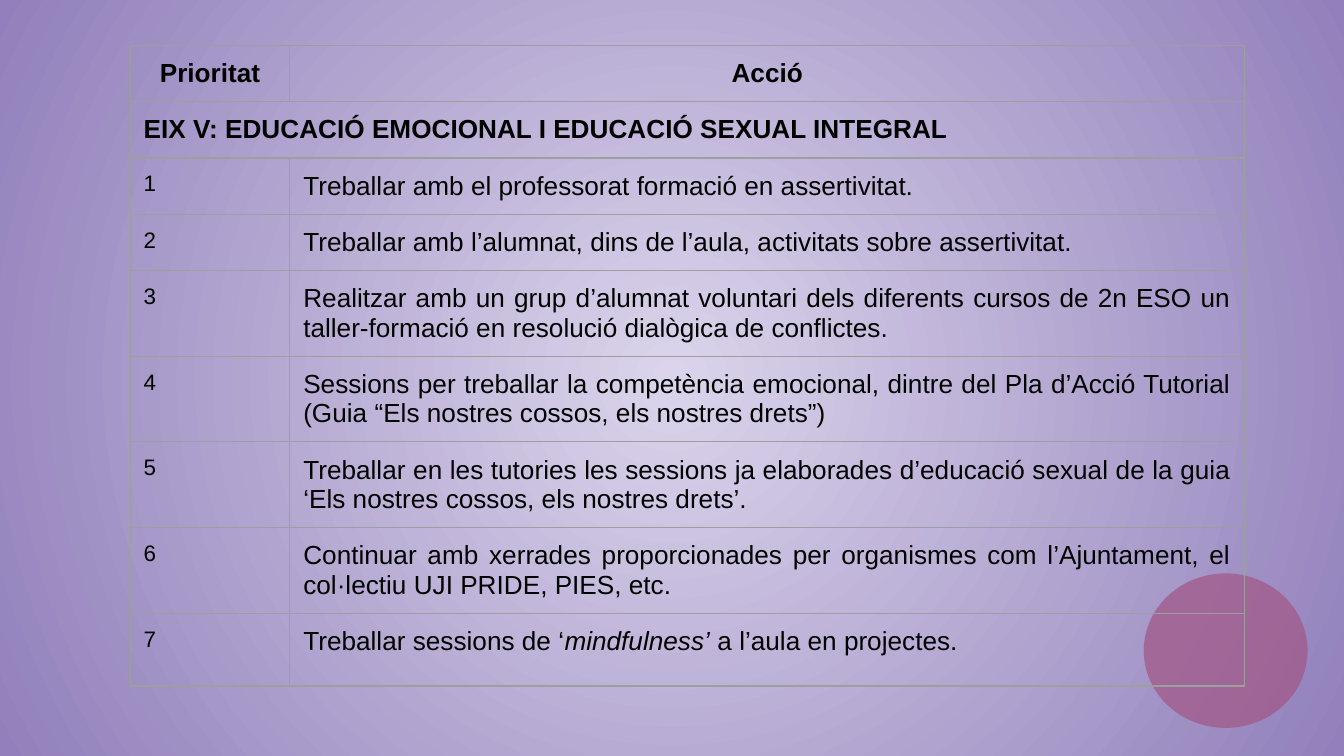
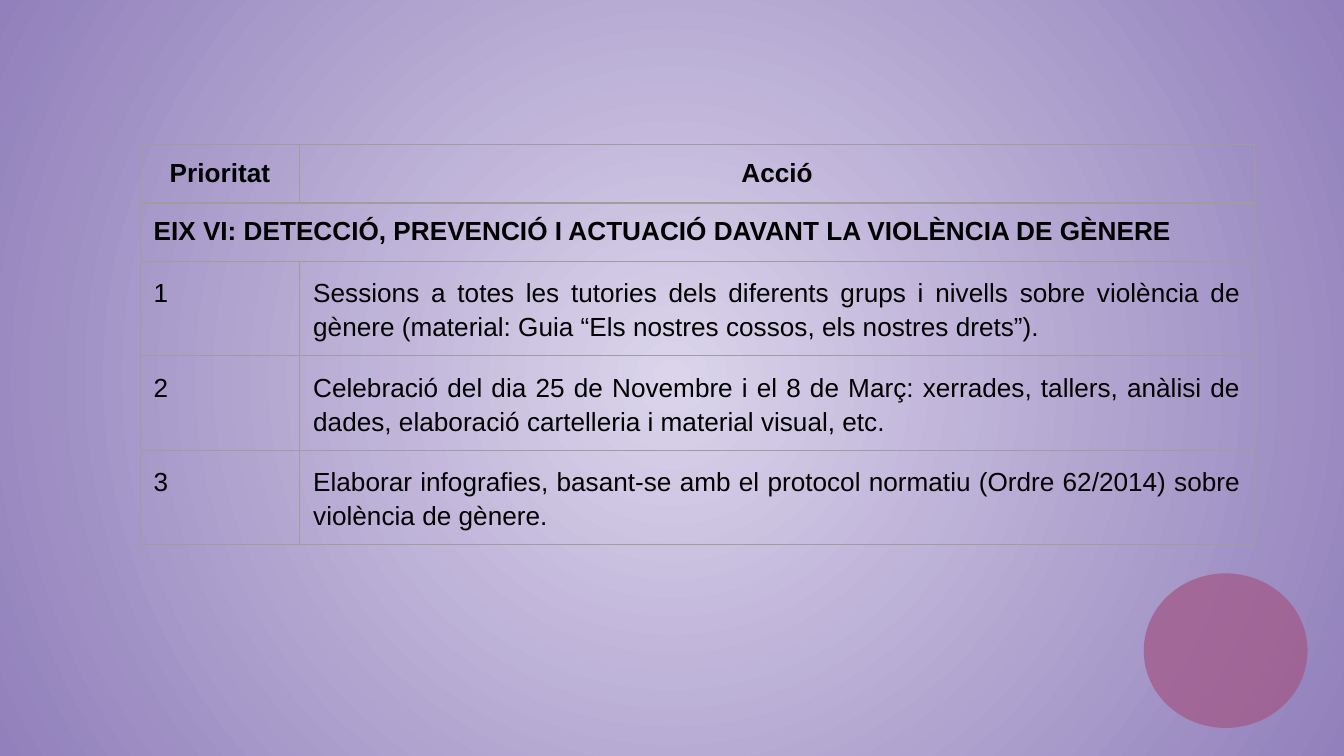
"""Two slides of school action tables, one per axis of the plan."""
import pptx
import pptx.dml.color
import pptx.enum.shapes
import pptx.enum.text
import pptx.oxml
import pptx.oxml.ns
import pptx.util
from lxml import etree

Pt = pptx.util.Pt
RGB = pptx.dml.color.RGBColor
ALIGN = pptx.enum.text.PP_ALIGN
qn = pptx.oxml.ns.qn

LILAC = RGB(0xDB, 0xD4, 0xEB)
VIOLET = RGB(0x91, 0x80, 0xBB)
PLUM = RGB(0xA1, 0x58, 0x87)
GREY = RGB(0x9E, 0x9E, 0x9E)
BLACK = RGB(0, 0, 0)
FONT = "Arial"
SIZE = 14
COLUMNS = (85.5, 511.5)
INSET = 7.2

EMOTIONAL = [
    "Treballar amb el professorat formació en assertivitat.",
    "Treballar amb l’alumnat, dins de l’aula, activitats sobre assertivitat.",
    "Realitzar amb un grup d’alumnat voluntari dels diferents cursos de 2n ESO un "
    "taller-formació en resolució dialògica de conflictes.",
    "Sessions per treballar la competència emocional, dintre del Pla d’Acció Tutorial "
    "(Guia “Els nostres cossos, els nostres drets”)",
    "Treballar en les tutories les sessions ja elaborades d’educació sexual de la guia "
    "‘Els nostres cossos, els nostres drets’.",
    "Continuar amb xerrades proporcionades per organismes com l’Ajuntament, el "
    "col·lectiu UJI PRIDE, PIES, etc.",
    ("Treballar sessions de ‘", "mindfulness’", " a l’aula en projectes."),
]
VIOLENCE = [
    "Sessions a totes les tutories dels diferents grups i nivells sobre violència de "
    "gènere (material: Guia “Els nostres cossos, els nostres drets”).",
    "Celebració del dia 25 de Novembre i el 8 de Març: xerrades, tallers, anàlisi de "
    "dades, elaboració cartelleria i material visual, etc.",
    "Elaborar infografies, basant-se amb el protocol normatiu (Ordre 62/2014) sobre "
    "violència de gènere.",
]


def set_background(master):
    """Give the master a radial gradient from lilac to violet."""
    fill = master.background.fill
    fill.gradient()
    for stop, color, position in zip(fill.gradient_stops, (LILAC, VIOLET), (0, 1)):
        stop.color.rgb = color
        stop.position = position
    grad = master.element.find(".//" + qn("p:bg") + "//" + qn("a:gradFill"))
    grad.remove(grad.find(qn("a:lin")))
    way = etree.SubElement(grad, qn("a:path"), path="circle")
    etree.SubElement(way, qn("a:fillToRect"), l="50000", t="50000", r="50000", b="50000")


def add_circle(s):
    """Add the translucent plum circle in the lower right corner."""
    sp = s.shapes.add_shape(pptx.enum.shapes.MSO_SHAPE.OVAL,
                            Pt(612.7), Pt(307.2), Pt(87.8), Pt(82.8))
    sp.shadow.inherit = False
    sp.fill.solid()
    sp.fill.fore_color.rgb = PLUM
    color = sp.element.spPr.find(qn("a:solidFill"))[0]
    etree.SubElement(color, qn("a:alpha"), val="73000")
    sp.line.fill.background()


def style_cell(cell):
    """Clear the fill of a cell, set its insets and draw its four borders."""
    cell.fill.background()
    cell.margin_left = cell.margin_right = Pt(INSET)
    cell.margin_top = cell.margin_bottom = Pt(INSET)
    tc_pr = cell._tc.get_or_add_tcPr()
    for i, side in enumerate(("lnL", "lnR", "lnT", "lnB")):
        ln = etree.Element(qn("a:" + side), w=str(Pt(0.75)))
        solid = etree.SubElement(ln, qn("a:solidFill"))
        etree.SubElement(solid, qn("a:srgbClr"), val=str(GREY))
        tc_pr.insert(i, ln)


def write_cell(cell, text, align=ALIGN.LEFT, size=SIZE, bold=False, spacing=None):
    """Write text into a cell; every second part of a tuple is italic."""
    p = cell.text_frame.paragraphs[0]
    p.alignment = align
    if spacing:
        p.line_spacing = spacing
    parts = (text,) if isinstance(text, str) else text
    for i, part in enumerate(parts):
        r = p.add_run()
        r.text = part
        r.font.name = FONT
        r.font.size = Pt(size)
        r.font.bold = bold
        r.font.italic = i % 2 == 1
        r.font.color.rgb = BLACK


def add_actions(s, left, top, heights, axis, actions, number_size=SIZE, spacing=None):
    """Add a table with a heading row, an axis row and numbered actions."""
    table = s.shapes.add_table(len(heights), len(COLUMNS), Pt(left), Pt(top),
                               Pt(sum(COLUMNS)), Pt(sum(heights))).table
    table.first_row = table.horz_banding = False
    for column, width in zip(table.columns, COLUMNS):
        column.width = Pt(width)
    for row, height in zip(table.rows, heights):
        row.height = Pt(height)
    for cell in table.iter_cells():
        style_cell(cell)
    for col, heading in enumerate(("Prioritat", "Acció")):
        write_cell(table.cell(0, col), heading, ALIGN.CENTER, bold=True)
    table.cell(1, 0).merge(table.cell(1, 1))
    write_cell(table.cell(1, 0), axis, bold=True)
    for number, action in enumerate(actions, 1):
        row = number + 1
        write_cell(table.cell(row, 0), str(number), size=number_size, spacing=spacing)
        write_cell(table.cell(row, 1), action, ALIGN.JUSTIFY, spacing=spacing)


def add_slide(prs):
    """Add a blank slide with the shared circle."""
    s = prs.slides.add_slide(prs.slide_layouts[6])
    add_circle(s)
    return s


def main():
    """Build both slides and save them."""
    prs = pptx.Presentation()
    prs.slide_width, prs.slide_height = Pt(720), Pt(405)
    set_background(prs.slide_master)
    add_actions(add_slide(prs), 69.8, 24.3, [30] * 4 + [45.8] * 4 + [39],
                "EIX V: EDUCACIÓ EMOCIONAL I EDUCACIÓ SEXUAL INTEGRAL",
                EMOTIONAL, number_size=12)
    add_actions(add_slide(prs), 75.1, 77.6, [31.2] * 2 + [50.5] * 3,
                "EIX VI: DETECCIÓ, PREVENCIÓ I ACTUACIÓ DAVANT LA VIOLÈNCIA DE GÈNERE",
                VIOLENCE, spacing=1.15)
    prs.save("out.pptx")


if __name__ == "__main__":
    main()
